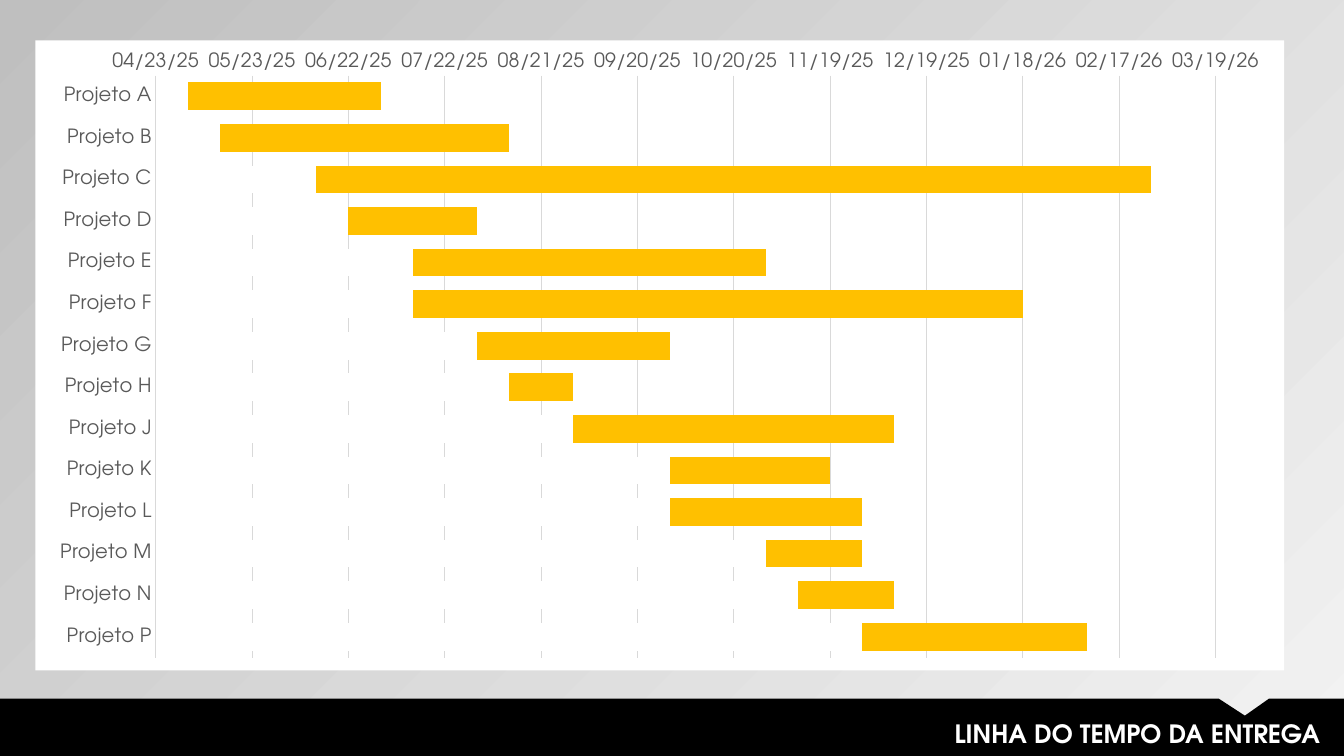
"""Build the delivery timeline slide with a Gantt-style bar chart."""
from pptx import Presentation, util as u
from pptx.chart import data
from pptx.dml import color
from pptx.enum import chart as ch, text
from pptx.oxml import parse_xml
from pptx.oxml.ns import nsdecls

TITLE = "LINHA DO TEMPO DA ENTREGA"
FONT = "TeX Gyre Adventor"
COLORS = {"bar": "FFC000", "white": "FFFFFF", "black": "000000", "label": "595959",
          "grid": "D9D9D9", "light": "F2F2F2", "dark": "BFBFBF"}
FIRST_DAY, LAST_DAY, STEP = 45770, 46100, 30
PROJECTS = [
    ("A", 10, 70), ("B", 20, 110), ("C", 50, 310), ("D", 60, 100), ("E", 80, 190),
    ("F", 80, 270), ("G", 100, 160), ("H", 110, 130), ("J", 130, 230), ("K", 160, 210),
    ("L", 160, 220), ("M", 190, 220), ("N", 200, 230), ("P", 220, 290),
]
WIDTH, HEIGHT = 960, 540
BAND_TOP = 499
NOTCH = [(870.5, BAND_TOP), (889.2, 511.2), (906.5, BAND_TOP)]
TITLE_BOX = (298, 509.8, 652.1, 28.8)
CHART_BOX = (25.2, 28.8, 892.1, 450)
PLOT_BOX = (86.1, 25.2, 757, 415.8)


def rgb(name):
    return color.RGBColor.from_string(COLORS[name])


def apply(target, **values):
    for name, value in values.items():
        setattr(target, name, value)


def style_font(font, size, shade, bold=False):
    apply(font, name=FONT, size=u.Pt(size), bold=bold)
    font.color.rgb = rgb(shade)


def paint(fill, shade):
    fill.solid()
    fill.fore_color.rgb = rgb(shade)


def style_line(line, shade):
    line.color.rgb = rgb(shade)
    line.width = u.Pt(0.75)


def add_background(page):
    fill = page.background.fill
    fill.gradient()
    fill.gradient_angle = 135
    for stop, shade in zip(fill.gradient_stops, ("light", "dark")):
        stop.color.rgb = rgb(shade)


def add_band(page):
    outline = [*NOTCH, (WIDTH, BAND_TOP), (WIDTH, HEIGHT), (0, HEIGHT)]
    builder = page.shapes.build_freeform(0, u.Pt(BAND_TOP), scale=1.0)
    builder.add_line_segments([(u.Pt(x), u.Pt(y)) for x, y in outline], close=True)
    band = builder.convert_to_shape()
    band.shadow.inherit = False
    paint(band.fill, "black")
    band.line.fill.background()


def add_title(page):
    box = page.shapes.title
    apply(box, **dict(zip(("left", "top", "width", "height"), map(u.Pt, TITLE_BOX))))
    frame = box.text_frame
    apply(frame, word_wrap=True, auto_size=text.MSO_AUTO_SIZE.NONE,
          vertical_anchor=text.MSO_ANCHOR.TOP,
          margin_left=u.Pt(7.2), margin_right=u.Pt(7.2),
          margin_top=u.Pt(3.6), margin_bottom=u.Pt(3.6))
    para = frame.paragraphs[0]
    para.alignment = text.PP_ALIGN.RIGHT
    span = para.add_run()
    span.text = TITLE
    style_font(span.font, 18, "white", bold=True)
    box.element.getparent().append(box.element)


def style_axes(chart):
    for axis in (chart.category_axis, chart.value_axis):
        apply(axis, major_tick_mark=ch.XL_TICK_MARK.NONE, minor_tick_mark=ch.XL_TICK_MARK.NONE)
        style_font(axis.tick_labels.font, 14, "label")
    projects, dates = chart.category_axis, chart.value_axis
    projects.reverse_order = True
    style_line(projects.format.line, "grid")
    apply(dates, minimum_scale=FIRST_DAY, maximum_scale=LAST_DAY, major_unit=STEP,
          has_major_gridlines=True)
    apply(dates.tick_labels, number_format="mm/dd/yy;@", number_format_is_linked=False)
    dates.format.line.fill.background()
    style_line(dates.major_gridlines.format.line, "grid")


def fix_layout(chart):
    area = chart.element.chart.plotArea
    for old in area.findall("{*}layout"):
        area.remove(old)
    sizes = "".join(f'<c:{side} val="{part / whole:.5f}"/>'
                    for side, part, whole in zip("xywh", PLOT_BOX, CHART_BOX[2:] * 2))
    area.insert(0, parse_xml(
        f'<c:layout {nsdecls("c")}><c:manualLayout><c:layoutTarget val="inner"/>'
        f'<c:xMode val="edge"/><c:yMode val="edge"/>{sizes}</c:manualLayout></c:layout>'))
    chart.element.chart.addnext(parse_xml(
        f'<c:spPr {nsdecls("c", "a")}><a:solidFill><a:srgbClr val="{COLORS["white"]}"/>'
        '</a:solidFill><a:ln><a:noFill/></a:ln></c:spPr>'))


def add_timeline(page):
    table = data.CategoryChartData()
    table.categories = [f"Projeto {letter}" for letter, _, _ in PROJECTS]
    table.add_series("Series 1", [FIRST_DAY + end for _, _, end in PROJECTS])
    table.add_series("Series 2", [FIRST_DAY + start for _, start, _ in PROJECTS])
    chart = page.shapes.add_chart(
        ch.XL_CHART_TYPE.BAR_CLUSTERED, *map(u.Pt, CHART_BOX), table).chart
    apply(chart, has_legend=False, has_title=False)
    style_font(chart.font, 14, "black")
    plot = chart.plots[0]
    apply(plot, gap_width=50, overlap=100, vary_by_categories=False)
    for series, shade in zip(plot.series, ("bar", "white")):
        paint(series.format.fill, shade)
    style_axes(chart)
    fix_layout(chart)


def main():
    deck = Presentation()
    apply(deck, slide_width=u.Pt(WIDTH), slide_height=u.Pt(HEIGHT))
    page = deck.slides.add_slide(deck.slide_layouts[5])
    add_background(page)
    add_band(page)
    add_title(page)
    add_timeline(page)
    deck.save("out.pptx")


if __name__ == "__main__":
    main()
